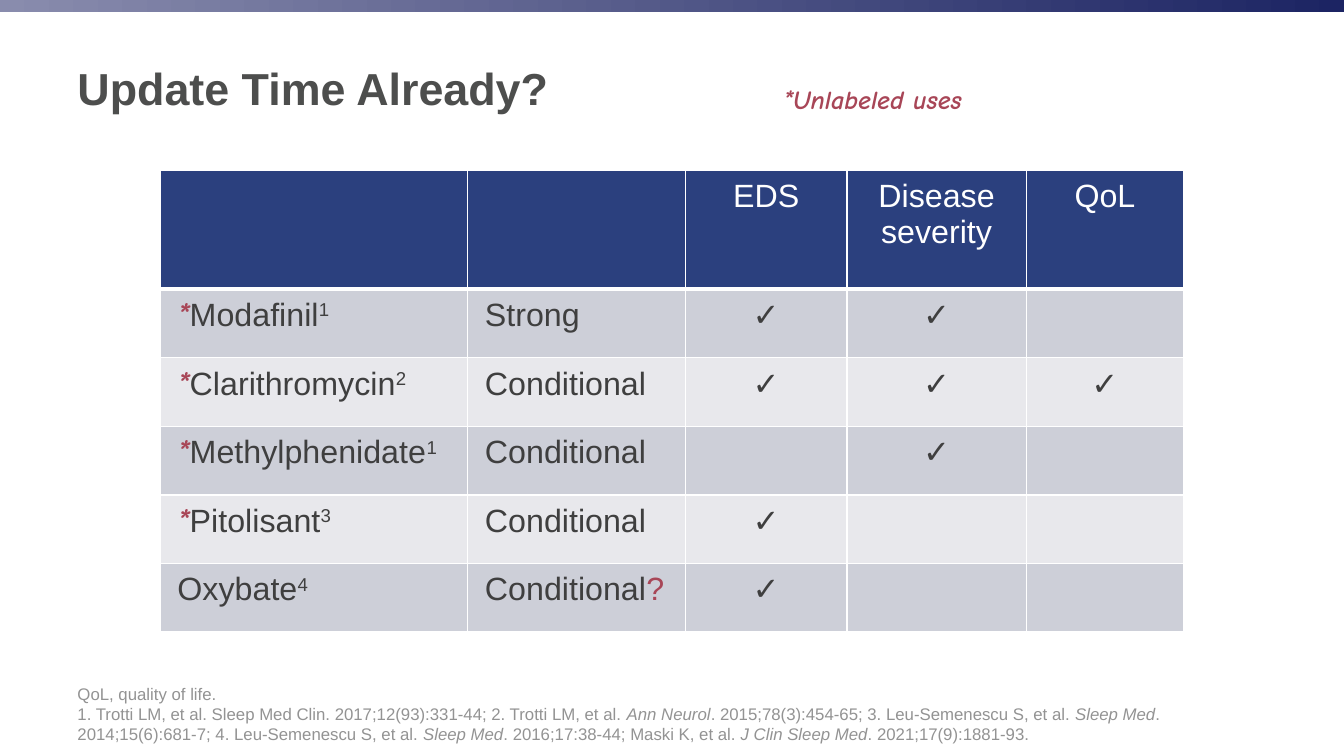
from lxml import etree
from pptx import Presentation
from pptx.dml.color import RGBColor
from pptx.enum.shapes import MSO_SHAPE
from pptx.enum.text import MSO_ANCHOR, PP_ALIGN
from pptx.oxml.ns import qn
from pptx.util import Inches, Pt

RECT = MSO_SHAPE.RECTANGLE
TOP, MIDDLE, BOTTOM = MSO_ANCHOR.TOP, MSO_ANCHOR.MIDDLE, MSO_ANCHOR.BOTTOM
LEFT, CENTER = PP_ALIGN.LEFT, PP_ALIGN.CENTER

WHITE = RGBColor(0xFF, 0xFF, 0xFF)
NAVY = RGBColor(0x2B, 0x40, 0x7E)
DARK = RGBColor(0x1C, 0x24, 0x63)
LILAC = RGBColor(0x89, 0x8C, 0xAD)
BAND = RGBColor(0xCD, 0xCF, 0xD8)
PALE = RGBColor(0xE8, 0xE8, 0xEC)
RED = RGBColor(0xA8, 0x46, 0x57)
INK = RGBColor(0x3F, 0x3F, 0x3F)
SLATE = RGBColor(0x4D, 0x4E, 0x4D)
GRAY = RGBColor(0x93, 0x93, 0x93)

SANS, COMIC = "Arial", "Comic Neue"
TICK = "✓"
WIDTHS = [3.05, 2.16, 1.6, 1.78, 1.56]
HEAD_H, ROW_H = 1.18, 0.68
HEADS = ["", "", "EDS", "Disease severity", "QoL"]
DRUGS = [
    ("*", "Modafinil", "1", "Strong", "", (1, 1, 0)),
    ("*", "Clarithromycin", "2", "Conditional", "", (1, 1, 1)),
    ("*", "Methylphenidate", "1", "Conditional", "", (0, 1, 0)),
    ("*", "Pitolisant", "3", "Conditional", "", (1, 0, 0)),
    ("", "Oxybate", "4", "Conditional", "?", (1, 0, 0)),
]
NOTE = "QoL, quality of life."
SOURCES = [
    "1. Trotti LM, et al. Sleep Med Clin. 2017;12(93):331-44; 2. Trotti LM, et al. ",
    "Ann Neurol",
    ". 2015;78(3):454-65; 3. Leu-Semenescu S, et al. ",
    "Sleep Med",
    ". 2014;15(6):681-7; 4. Leu-Semenescu S, et al. ",
    "Sleep Med",
    ". 2016;17:38-44; Maski K, et al. ",
    "J Clin Sleep Med",
    ". 2021;17(9):1881-93.",
]


def add_text(par, text, size, color, face=SANS, bold=False, italic=False, raised=False):
    if not text:
        return
    run = par.add_run()
    run.text = text
    font = run.font
    font.name, font.size = face, Pt(size)
    font.bold, font.italic = bold, italic
    font.color.rgb = color
    if raised:
        run._r.get_or_add_rPr().set("baseline", "30000")


def add_box(slide, x, y, w, h, anchor=TOP, align=LEFT):
    frame = slide.shapes.add_textbox(Inches(x), Inches(y), Inches(w), Inches(h)).text_frame
    frame.word_wrap = True
    frame.vertical_anchor = anchor
    frame.paragraphs[0].alignment = align
    return frame


def draw_bar(slide, x, y, w, h):
    bar = slide.shapes.add_shape(RECT, Inches(x), Inches(y), Inches(w), Inches(h))
    bar.shadow.inherit = False
    bar.line.fill.background()
    bar.fill.gradient()
    bar.fill.gradient_angle = 0
    for stop, color in zip(bar.fill.gradient_stops, (LILAC, DARK)):
        stop.color.rgb = color


def draw_title(slide, x, y, w, h):
    par = add_box(slide, x, y, w, h, MIDDLE).paragraphs[0]
    add_text(par, "Update Time Already?", 32, SLATE, bold=True)


def draw_label(slide, x, y, w, h):
    par = add_box(slide, x, y, w, h, align=CENTER).paragraphs[0]
    add_text(par, "*Unlabeled uses", 18.7, RED, COMIC, True, True)


def style_cell(cell, color, base):
    props = cell._tc.get_or_add_tcPr()
    for side, width in zip("LRTB", (1, 1, 1, base)):
        line = etree.SubElement(props, qn("a:ln" + side), w=str(Pt(width)))
        fill = etree.SubElement(line, qn("a:solidFill"))
        etree.SubElement(fill, qn("a:srgbClr"), val=str(WHITE))
    cell.fill.solid()
    cell.fill.fore_color.rgb = color
    cell.margin_left = cell.margin_right = Inches(0.17)
    cell.margin_top = cell.margin_bottom = Inches(0.08)


def draw_table(slide, x, y, w, h):
    table = slide.shapes.add_table(
        len(DRUGS) + 1, len(WIDTHS), Inches(x), Inches(y), Inches(w), Inches(h)
    ).table
    table.first_row = table.horz_banding = False
    for col, width in zip(table.columns, WIDTHS):
        col.width = Inches(width)
    for i, row in enumerate(table.rows):
        row.height = Inches(ROW_H if i else HEAD_H)
        color = (PALE, BAND)[i % 2] if i else NAVY
        for j, cell in enumerate(row.cells):
            style_cell(cell, color, 1 if i else 3)
            cell.text_frame.paragraphs[0].alignment = CENTER if j > 1 else LEFT

    def put(i, j, text, color, **style):
        add_text(table.cell(i, j).text_frame.paragraphs[0], text, 23, color, **style)

    for j, head in enumerate(HEADS):
        put(0, j, head, WHITE)
    for i, (star, drug, ref, grade, doubt, ticks) in enumerate(DRUGS, 1):
        put(i, 0, star, RED, face=COMIC, bold=True, italic=True)
        put(i, 0, drug, INK)
        put(i, 0, ref, INK, raised=True)
        put(i, 1, grade, INK)
        put(i, 1, doubt, RED)
        for j, tick in enumerate(ticks, 2):
            put(i, j, TICK if tick else "", INK)


def draw_notes(slide, x, y, w, h):
    frame = add_box(slide, x, y, w, h, BOTTOM)
    add_text(frame.paragraphs[0], NOTE, 12, GRAY)
    par = frame.add_paragraph()
    for i, part in enumerate(SOURCES):
        add_text(par, part, 12, GRAY, italic=i % 2 == 1)


def main():
    deck = Presentation()
    deck.slide_width, deck.slide_height = Inches(13.33), Inches(7.5)
    slide = deck.slides.add_slide(deck.slide_layouts[6])
    draw_bar(slide, 0, 0, 13.33, 0.12)
    draw_title(slide, 0.67, 0.22, 11.75, 1.3)
    draw_table(slide, 1.59, 1.69, sum(WIDTHS), HEAD_H + ROW_H * len(DRUGS))
    draw_label(slide, 7.61, 0.78, 2.09, 0.73)
    draw_notes(slide, 0.67, 6.95, 11.75, 0.48)
    deck.save("out.pptx")


if __name__ == "__main__":
    main()
